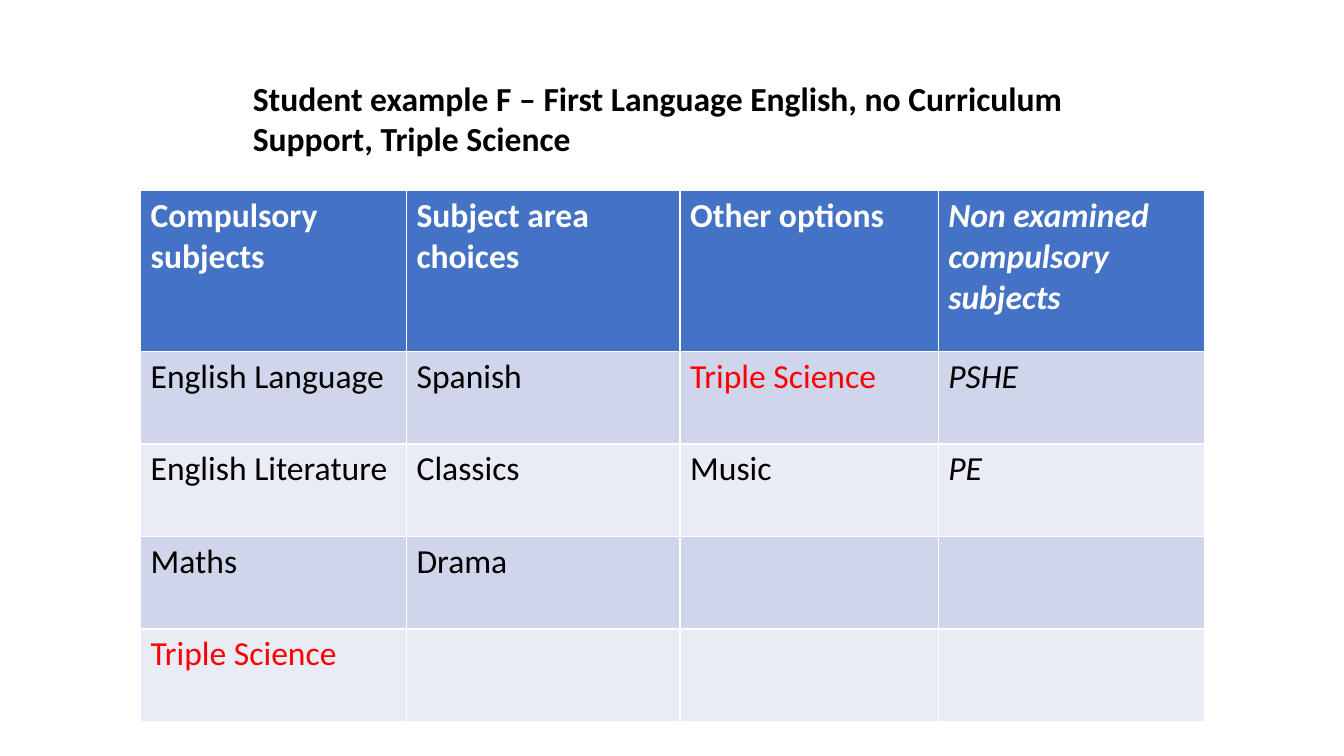
from dataclasses import dataclass

import pptx
import pptx.dml.color
import pptx.enum.text
import pptx.util

Pt = pptx.util.Pt

BLACK, WHITE, RED = "000000", "FFFFFF", "FF0000"
HEADER_FILL = "4472C4"
BAND_FILLS = ("CFD5EA", "E9EBF5")
COLUMN_WIDTHS = (190, 195.4, 184.4, 190)
HEADER_HEIGHT, SUBJECT_HEIGHT = 115.2, 66.1
HIGHLIGHTED = "Triple Science"
TITLE = "Student example F – First Language English, no Curriculum Support, Triple Science"


@dataclass(frozen=True)
class OptionColumn:
    heading: str
    subjects: tuple[str, ...]
    italic: bool = False


OPTION_COLUMNS = (
    OptionColumn("Compulsory subjects",
                 ("English Language", "English Literature", "Maths", HIGHLIGHTED)),
    OptionColumn("Subject area choices", ("Spanish", "Classics", "Drama", "")),
    OptionColumn("Other options", (HIGHLIGHTED, "Music", "", "")),
    OptionColumn("Non examined compulsory subjects", ("PSHE", "PE", "", ""), italic=True),
)


def rgb(value: str) -> pptx.dml.color.RGBColor:
    return pptx.dml.color.RGBColor.from_string(value)


def write_text(frame, wording: str, color: str, bold: bool, italic: bool = False) -> None:
    run = frame.paragraphs[0].add_run()
    run.text = wording
    font_format = {"name": "Calibri", "size": Pt(24), "bold": bold, "italic": italic}
    for attribute, value in font_format.items():
        setattr(run.font, attribute, value)
    run.font.color.rgb = rgb(color)


def fill_cell(cell, wording: str, fill: str, color: str, bold: bool, italic: bool) -> None:
    cell.fill.solid()
    cell.fill.fore_color.rgb = rgb(fill)
    if wording:
        write_text(cell.text_frame, wording, color, bold, italic)


def add_title(slide) -> None:
    title = slide.shapes.add_textbox(Pt(173.5), Pt(51.8), Pt(603.4), Pt(65.5)).text_frame
    frame_format = {"word_wrap": True, "auto_size": pptx.enum.text.MSO_AUTO_SIZE.SHAPE_TO_FIT_TEXT}
    for attribute, value in frame_format.items():
        setattr(title, attribute, value)
    write_text(title, TITLE, BLACK, bold=True)


def add_options(slide) -> None:
    heights = [HEADER_HEIGHT] + [SUBJECT_HEIGHT] * len(OPTION_COLUMNS[0].subjects)
    options = slide.shapes.add_table(
        len(heights), len(OPTION_COLUMNS), Pt(100.4), Pt(135.8),
        Pt(sum(COLUMN_WIDTHS)), Pt(sum(heights))).table
    for row, height in zip(options.rows, heights):
        row.height = Pt(height)
    for column_index, (column, width) in enumerate(zip(OPTION_COLUMNS, COLUMN_WIDTHS)):
        options.columns[column_index].width = Pt(width)
        fill_cell(options.cell(0, column_index), column.heading,
                  HEADER_FILL, WHITE, True, column.italic)
        for subject_index, subject in enumerate(column.subjects):
            fill_cell(options.cell(subject_index + 1, column_index), subject,
                      BAND_FILLS[subject_index % 2],
                      RED if subject == HIGHLIGHTED else BLACK, False, column.italic)


def main() -> None:
    presentation = pptx.Presentation()
    for attribute, value in {"slide_width": Pt(960), "slide_height": Pt(540)}.items():
        setattr(presentation, attribute, value)
    slide = presentation.slides.add_slide(presentation.slide_layouts[6])
    add_options(slide)
    add_title(slide)
    presentation.save("out.pptx")


if __name__ == "__main__":
    main()
